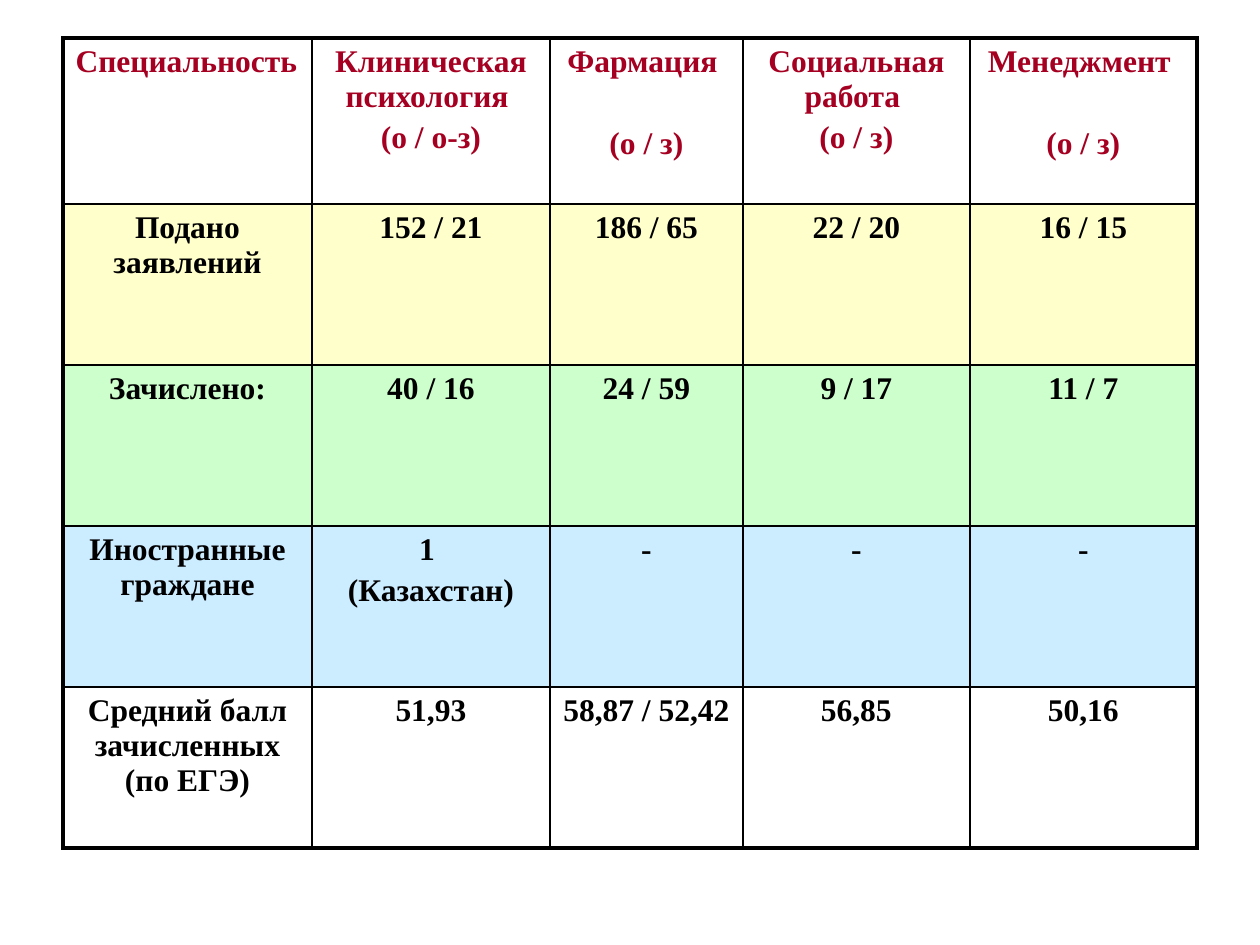
import pptx
import pptx.dml.color
import pptx.enum.text
import pptx.oxml
import pptx.oxml.ns
import pptx.util

RGBColor = pptx.dml.color.RGBColor
PP_ALIGN = pptx.enum.text.PP_ALIGN

CRIMSON = RGBColor(0xA5, 0x00, 0x21)
BLACK = RGBColor(0x00, 0x00, 0x00)
YELLOW = RGBColor(0xFF, 0xFF, 0xCC)
GREEN = RGBColor(0xCC, 0xFF, 0xCC)
BLUE = RGBColor(0xCC, 0xEC, 0xFF)
WHITE = RGBColor(0xFF, 0xFF, 0xFF)

FONT_NAME = "Times New Roman"
FONT_SIZE = 18
PARAGRAPH_GAP = 3.6
ONE_LINE_HEADER_GAP = 27  # lowers the study form under a one-line header
INNER_BORDER, OUTER_BORDER = 1, 2.25

PX = 914400 // 126
SLIDE_SIZE = (1260, 945)
TABLE_LEFT, TABLE_TOP = 63, 38
COLUMN_WIDTHS = [249, 238, 193, 227, 227]
ROW_HEIGHTS = [166, 161, 161, 161, 161]

# Row fill, then the cells; a line break starts a new paragraph.
ROWS = [
    (None, ["Специальность", "Клиническая психология \n(о / о-з)", "Фармация \n(о / з)",
            "Социальная работа \n(о / з)", "Менеджмент \n(о / з)"]),
    (YELLOW, ["Подано заявлений", "152 / 21", "186 / 65", "22 / 20", "16 / 15"]),
    (GREEN, ["Зачислено:", "40 / 16", "24 / 59", "9 / 17", "11 / 7"]),
    (BLUE, ["Иностранные граждане", "1 \n(Казахстан)", "-", "-", "-"]),
    (WHITE, ["Средний балл зачисленных (по ЕГЭ)", "51,93", "58,87 / 52,42", "56,85", "50,16"]),
]
ONE_LINE_HEADERS = {(0, 2), (0, 4)}


def set_borders(cell, row, column):
    """Draw a thick line on the table's edges and a thin one elsewhere."""
    on_edge = {
        "lnL": column == 0,
        "lnR": column == len(COLUMN_WIDTHS) - 1,
        "lnT": row == 0,
        "lnB": row == len(ROWS) - 1,
    }
    properties = cell._tc.get_or_add_tcPr()
    for index, (side, outer) in enumerate(on_edge.items()):
        width = pptx.util.Pt(OUTER_BORDER if outer else INNER_BORDER)
        properties.insert(index, pptx.oxml.parse_xml(
            f'<a:{side} {pptx.oxml.ns.nsdecls("a")} w="{width}">'
            f'<a:solidFill><a:srgbClr val="{BLACK}"/></a:solidFill></a:{side}>'))


def write_text(cell, text, color, alignment, gap):
    cell.text_frame.text = text
    for index, paragraph in enumerate(cell.text_frame.paragraphs):
        paragraph.alignment = alignment
        if index:
            paragraph.space_before = pptx.util.Pt(gap)
        for run in paragraph.runs:
            run.font.name = FONT_NAME
            run.font.size = pptx.util.Pt(FONT_SIZE)
            run.font.bold = True
            run.font.color.rgb = color


def add_admissions_table(slide):
    table = slide.shapes.add_table(
        len(ROWS), len(COLUMN_WIDTHS), TABLE_LEFT * PX, TABLE_TOP * PX,
        sum(COLUMN_WIDTHS) * PX, sum(ROW_HEIGHTS) * PX).table
    table.first_row = False
    table.horz_banding = False
    for column, width in zip(table.columns, COLUMN_WIDTHS):
        column.width = width * PX
    for row, height in zip(table.rows, ROW_HEIGHTS):
        row.height = height * PX

    for row, (fill, texts) in enumerate(ROWS):
        for column, text in enumerate(texts):
            cell = table.cell(row, column)
            if fill is None:
                cell.fill.background()
            else:
                cell.fill.solid()
                cell.fill.fore_color.rgb = fill
            set_borders(cell, row, column)
            write_text(
                cell, text,
                color=CRIMSON if row == 0 else BLACK,
                alignment=PP_ALIGN.LEFT if row == column == 0 else PP_ALIGN.CENTER,
                gap=ONE_LINE_HEADER_GAP if (row, column) in ONE_LINE_HEADERS else PARAGRAPH_GAP)


def main():
    presentation = pptx.Presentation()
    presentation.slide_width, presentation.slide_height = (side * PX for side in SLIDE_SIZE)
    slide = presentation.slides.add_slide(presentation.slide_layouts.get_by_name("Blank"))
    add_admissions_table(slide)
    presentation.save("out.pptx")


if __name__ == "__main__":
    main()
